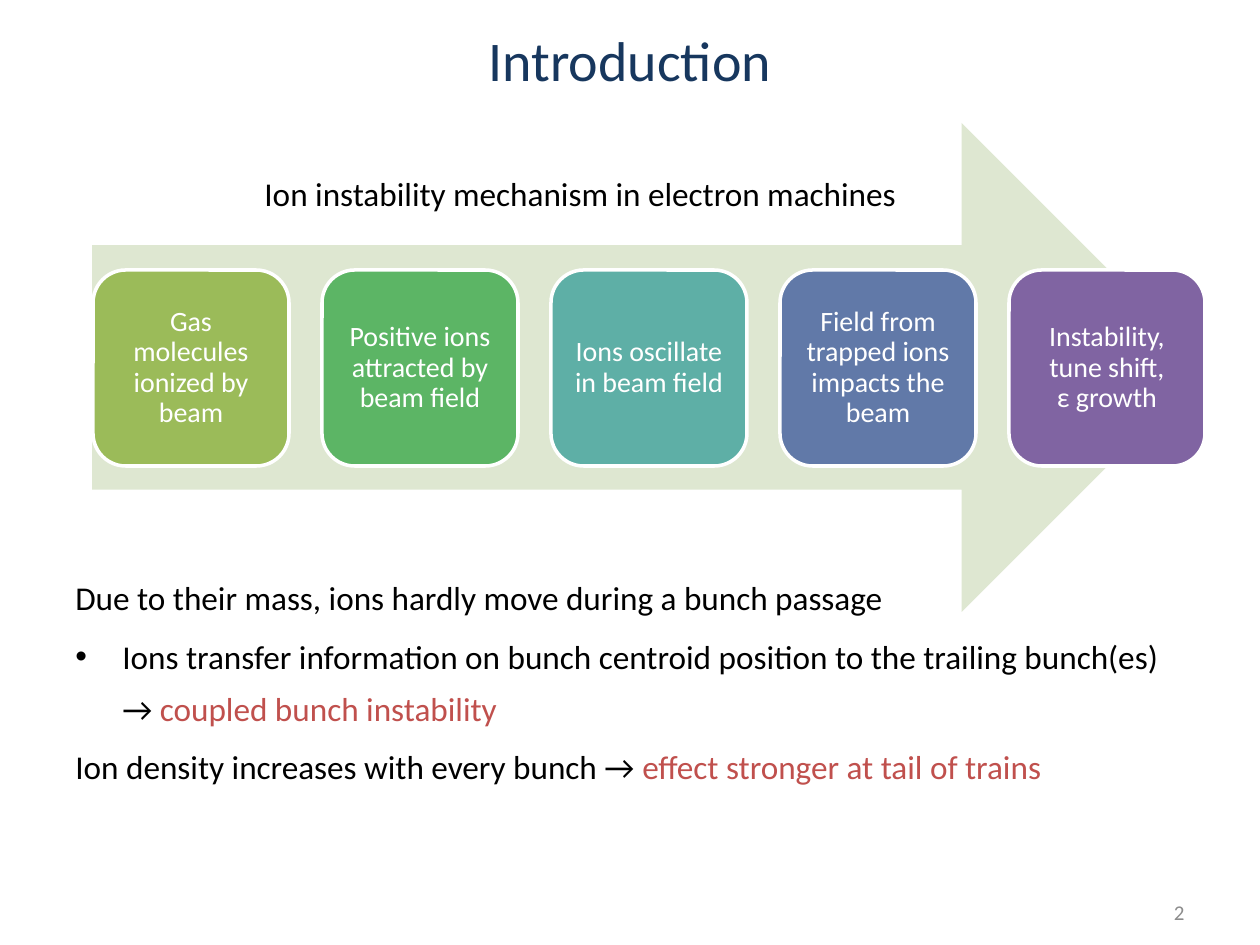
from lxml.etree import SubElement
from pptx import Presentation
from pptx.dml.color import RGBColor
from pptx.enum.shapes import MSO_SHAPE
from pptx.enum.text import MSO_ANCHOR, PP_ALIGN
from pptx.oxml.ns import qn
from pptx.util import Pt

COLORS = {
    "title": "17375E",
    "text": "000000",
    "accent": "C0504D",
    "arrow": "DEE7D1",
    "white": "FFFFFF",
    "number": "8C8C8C",
}
FONT = "Calibri"

TITLE = "Introduction"
CAPTION = "Ion instability mechanism in electron machines"
STEPS = [
    ("Gas molecules ionized by beam", "9BBB59"),
    ("Positive ions attracted by beam field", "5CB565"),
    ("Ions oscillate in beam field", "5EAFA6"),
    ("Field from trapped ions impacts the beam", "6179A8"),
    ("Instability, tune shift,\vε growth", "8064A2"),
]
# (bulleted, plain text, highlighted ending)
REMARKS = [
    (False, "Due to their mass, ions hardly move during a bunch passage", ""),
    (True, "Ions transfer information on bunch centroid position to the trailing bunch(es) → ",
     "coupled bunch instability"),
    (False, "Ion density increases with every bunch → ", "effect stronger at tail of trains"),
]
SLIDE_NUMBER = "2"

STEP_LEFT, STEP_TOP, STEP_SIZE, STEP_PITCH = 93, 270, 196, 229
BULLET_INDENT = 47


def px(length):
    """Convert pixels, 126 to the inch, to EMU."""
    return round(length * 914400 / 126)


def rgb(name):
    return RGBColor.from_string(COLORS.get(name, name))


def style(paragraph, size, color, align=PP_ALIGN.LEFT):
    paragraph.alignment = align
    paragraph.font.name = FONT
    paragraph.font.size = Pt(size)
    paragraph.font.color.rgb = rgb(color)


def add_textbox(slide, *box):
    frame = slide.shapes.add_textbox(*map(px, box)).text_frame
    frame.word_wrap = True
    return frame


def add_filled(slide, preset, color, *box):
    shape = slide.shapes.add_shape(preset, *map(px, box))
    shape.shadow.inherit = False
    shape.fill.solid()
    shape.fill.fore_color.rgb = rgb(color)
    return shape


def add_process(slide):
    arrow = add_filled(slide, MSO_SHAPE.RIGHT_ARROW, "arrow", 92, 123, 1114, 489)
    arrow.line.fill.background()
    for index, (step, color) in enumerate(STEPS):
        card = add_filled(slide, MSO_SHAPE.ROUNDED_RECTANGLE, color,
                          STEP_LEFT + index * STEP_PITCH, STEP_TOP, STEP_SIZE, STEP_SIZE)
        card.line.color.rgb = rgb("white")
        card.line.width = Pt(2)
        frame = card.text_frame
        frame.word_wrap = True
        frame.vertical_anchor = MSO_ANCHOR.MIDDLE
        frame.margin_left = frame.margin_right = px(9)
        frame.margin_top = frame.margin_bottom = px(9)
        frame.text = step
        frame.paragraphs[0].line_spacing = 0.9
        style(frame.paragraphs[0], 16, "white", PP_ALIGN.CENTER)


def add_remarks(slide):
    frame = add_textbox(slide, 63, 559, 1134, 318)
    for index, (bulleted, plain, highlight) in enumerate(REMARKS):
        paragraph = frame.add_paragraph() if index else frame.paragraphs[0]
        paragraph.line_spacing = 1.3
        if index:
            paragraph.space_before = Pt(4)
        if bulleted:
            properties = paragraph._p.get_or_add_pPr()
            properties.set("marL", str(px(BULLET_INDENT)))
            properties.set("indent", str(-px(BULLET_INDENT)))
            SubElement(properties, qn("a:buFont"), typeface="Arial")
            SubElement(properties, qn("a:buChar"), char="•")
        style(paragraph, 19, "text")
        paragraph.add_run().text = plain
        if highlight:
            ending = paragraph.add_run()
            ending.text = highlight
            ending.font.color.rgb = rgb("accent")


def main():
    deck = Presentation()
    deck.slide_width, deck.slide_height = px(1260), px(945)
    slide = deck.slides.add_slide(deck.slide_layouts[5])

    title = slide.shapes.title
    title.left, title.top, title.width, title.height = map(px, (63, 24, 1134, 71))
    title.text_frame.text = TITLE
    title.text_frame.vertical_anchor = MSO_ANCHOR.MIDDLE
    style(title.text_frame.paragraphs[0], 32, "title", PP_ALIGN.CENTER)

    add_process(slide)

    caption = add_textbox(slide, 252, 167, 700, 53)
    caption.text = CAPTION
    style(caption.paragraphs[0], 19, "text")

    add_remarks(slide)

    number = add_textbox(slide, 903, 887, 294, 50)
    number.vertical_anchor = MSO_ANCHOR.MIDDLE
    number.text = SLIDE_NUMBER
    style(number.paragraphs[0], 12, "number", PP_ALIGN.RIGHT)

    deck.save("out.pptx")


if __name__ == "__main__":
    main()
